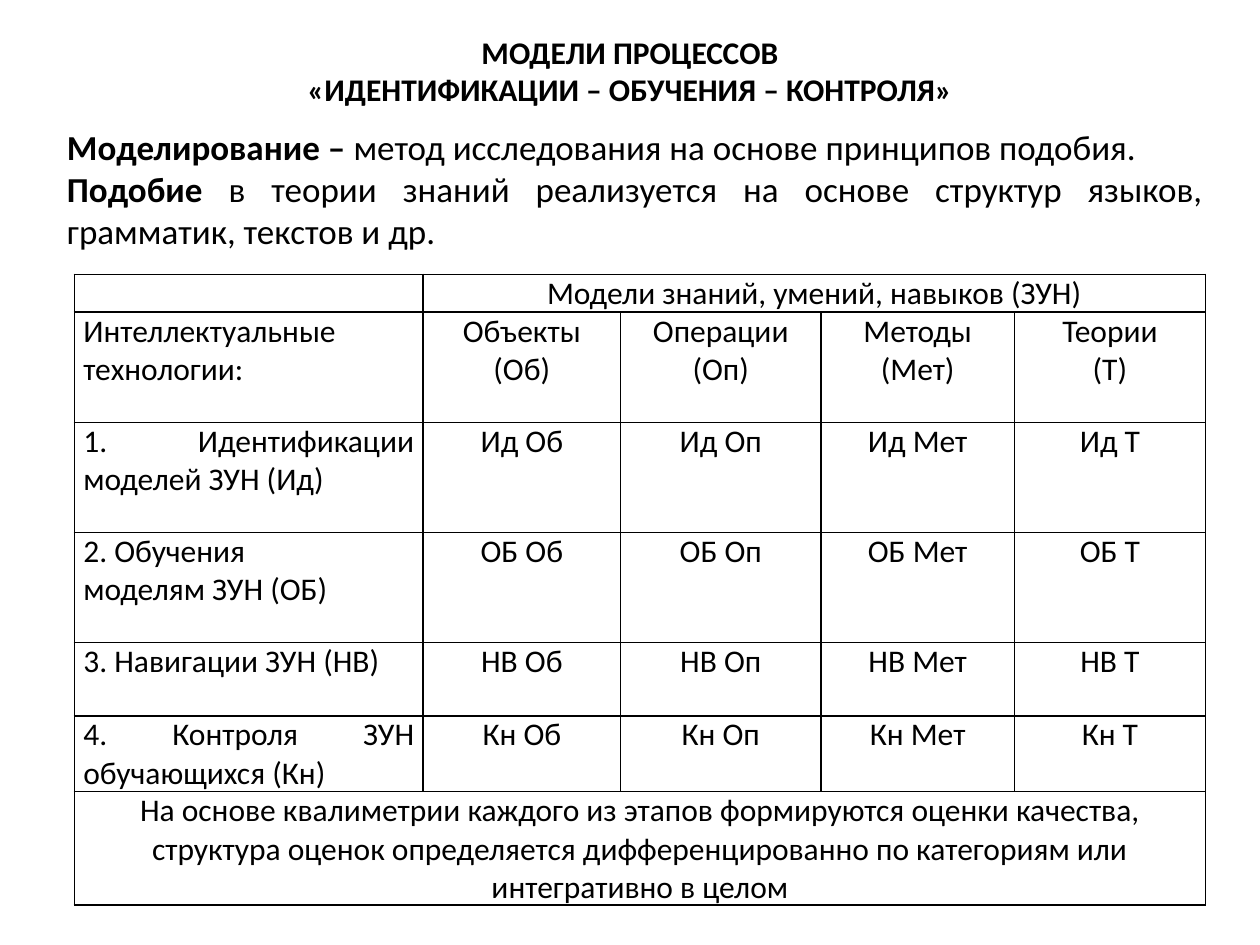
from lxml.etree import SubElement
from pptx import Presentation
from pptx.dml.color import RGBColor
from pptx.enum.text import MSO_ANCHOR, MSO_AUTO_SIZE, PP_ALIGN as Align
from pptx.oxml.ns import qn
from pptx.util import Cm, Pt

BLACK = RGBColor(0x00, 0x00, 0x00)
WHITE = RGBColor(0xFF, 0xFF, 0xFF)


class SlideBuilder:
    """Holds the text style and the current slide, and adds its elements."""

    font = "Calibri"
    ink = BLACK
    paper = WHITE
    border = Pt(1)

    def __init__(self, slide):
        self.slide = slide

    def add_runs(self, frame, paragraphs, size, align):
        frame.word_wrap = True
        for index, runs in enumerate(paragraphs):
            paragraph = frame.add_paragraph() if index else frame.paragraphs[0]
            paragraph.alignment = align
            for text, bold in runs:
                run = paragraph.add_run()
                run.text = text
                run.font.name = self.font
                run.font.size = Pt(size)
                run.font.bold = bold
                run.font.color.rgb = self.ink

    def title(self, lines, left, top, width, height):
        heading = self.slide.shapes.title
        heading.left, heading.top = Cm(left), Cm(top)
        heading.width, heading.height = Cm(width), Cm(height)
        frame = heading.text_frame
        frame.auto_size = MSO_AUTO_SIZE.NONE
        frame.vertical_anchor = MSO_ANCHOR.TOP
        self.add_runs(frame, [[(line, True)] for line in lines], 18, Align.CENTER)

    def text(self, paragraphs, left, top, width, height):
        box = self.slide.shapes.add_textbox(Cm(left), Cm(top), Cm(width), Cm(height))
        self.add_runs(box.text_frame, paragraphs, 20, Align.JUSTIFY)

    def outline(self, cell):
        properties = cell._tc.get_or_add_tcPr()
        for side in ("lnL", "lnR", "lnT", "lnB"):
            line = SubElement(properties, qn(f"a:{side}"), w=str(self.border))
            fill = SubElement(line, qn("a:solidFill"))
            SubElement(fill, qn("a:srgbClr"), val=str(self.ink))

    def table(self, rows, merges, widths, heights, left, top):
        grid = self.slide.shapes.add_table(
            len(heights), len(widths), Cm(left), Cm(top), Cm(sum(widths)), Cm(sum(heights))
        ).table
        grid.first_row = grid.horz_banding = False
        for column, width in zip(grid.columns, widths):
            column.width = Cm(width)
        for row, height in zip(grid.rows, heights):
            row.height = Cm(height)
        for cell in grid.iter_cells():
            self.outline(cell)
            cell.fill.solid()
            cell.fill.fore_color.rgb = self.paper
            cell.margin_left = cell.margin_right = Cm(0.18)
            cell.margin_top = cell.margin_bottom = 0
        for row, first, last in merges:
            grid.cell(row, first).merge(grid.cell(row, last))
        merged_starts = {(row, first) for row, first, _ in merges}
        for r, row in enumerate(rows):
            for c, content in enumerate(row):
                if content:
                    centred = c > 0 or (r, c) in merged_starts
                    align = Align.CENTER if centred else Align.JUSTIFY
                    lines = [[(line, False)] for line in content.split("\n")]
                    self.add_runs(grid.cell(r, c).text_frame, lines, 18, align)


def main():
    deck = Presentation()
    deck.slide_width, deck.slide_height = Cm(25.4), Cm(19.05)
    builder = SlideBuilder(deck.slides.add_slide(deck.slide_layouts[5]))

    builder.title(
        ["МОДЕЛИ ПРОЦЕССОВ", "«ИДЕНТИФИКАЦИИ – ОБУЧЕНИЯ – КОНТРОЛЯ»"],
        2.1, 0.53, 21.2, 1.8,
    )
    builder.text(
        [
            [("Моделирование – ", True),
             ("метод исследования на основе принципов подобия.", False)],
            [("Подобие ", True),
             ("в теории знаний реализуется на основе структур языков, "
              "грамматик, текстов и др.", False)],
        ],
        1.1, 2.4, 23.4, 2.82,
    )

    models = ["Об", "Оп", "Мет", "Т"]
    technologies = [
        ("1. Идентификации моделей ЗУН (Ид)", "Ид"),
        ("2. Обучения\nмоделям ЗУН (ОБ)", "ОБ"),
        ("3. Навигации ЗУН (НВ)", "НВ"),
        ("4. Контроля ЗУН обучающихся (Кн)", "Кн"),
    ]
    rows = [
        ["", "Модели знаний, умений, навыков (ЗУН)"],
        ["Интеллектуальные\nтехнологии:", "Объекты (Об)", "Операции\n(Оп)",
         "Методы\n(Мет)", "Теории\n(Т)"],
        *[[name] + [f"{code} {model}" for model in models] for name, code in technologies],
        ["На основе квалиметрии каждого из этапов формируются оценки качества, "
         "структура оценок определяется дифференцированно по категориям или "
         "интегративно в целом"],
    ]
    builder.table(
        rows,
        merges=[(0, 1, 4), (6, 0, 4)],
        widths=[7.03, 3.98, 4.04, 3.9, 3.85],
        heights=[0.74, 2.22, 2.22, 2.22, 1.48, 1.48, 2.22],
        left=1.5, top=5.53,
    )
    deck.save("out.pptx")


if __name__ == "__main__":
    main()
